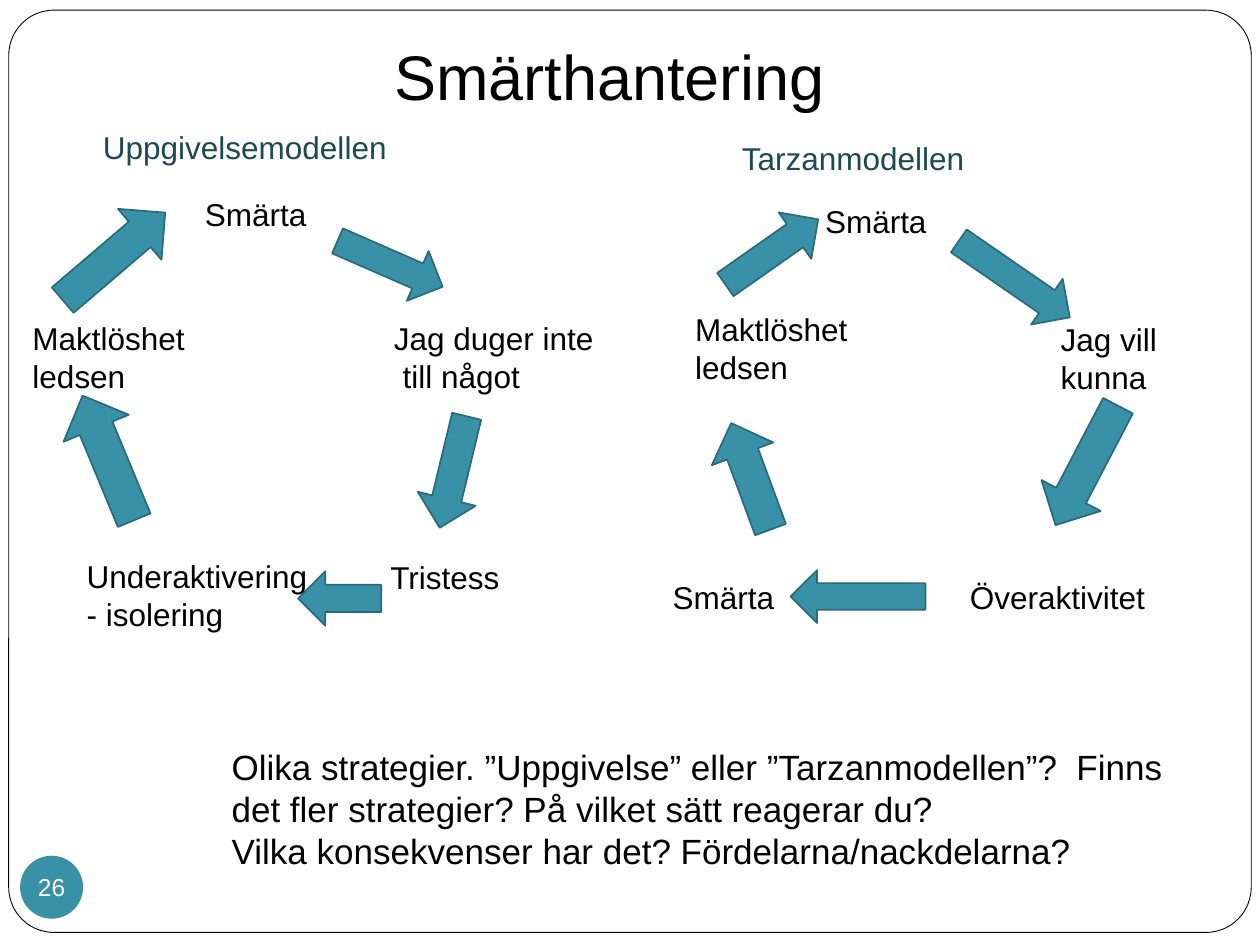
import pptx
import pptx.util
import pptx.dml.color
import pptx.enum.shapes
import pptx.enum.text

Pt = pptx.util.Pt
RGB = pptx.dml.color.RGBColor
SHAPE = pptx.enum.shapes.MSO_SHAPE
ALIGN = pptx.enum.text.PP_ALIGN
ANCHOR = pptx.enum.text.MSO_ANCHOR
AUTO = pptx.enum.text.MSO_AUTO_SIZE

BLACK = RGB(0x00, 0x00, 0x00)
WHITE = RGB(0xFF, 0xFF, 0xFF)
TEAL = RGB(0x38, 0x91, 0xA7)
TEAL_EDGE = RGB(0x29, 0x6B, 0x7C)
TEAL_DARK = RGB(0x1C, 0x49, 0x54)

UP, DOWN = SHAPE.UP_ARROW, SHAPE.DOWN_ARROW

HEADINGS = [
    ("Uppgivelsemodellen", (51.8, 69.8, 189.4, 29)),
    ("Tarzanmodellen", (416.9, 75.6, 189.4, 29)),
]
GIVING_UP_STEPS = [
    ("Smärta", (110, 108, 73.5, 29)),
    ("Jag duger inte\v till något", (218, 179, 130, 51)),
    ("Tristess", (216, 315.4, 87, 29)),
    ("Underaktivering\v- isolering", (42.5, 314.6, 141, 51)),
    ("Maktlöshet\nledsen", (11.5, 179, 122, 51)),
]
GIVING_UP_ARROWS = [
    (DOWN, (207.4, 118, 31, 65.5), 293.6),
    (DOWN, (242, 237, 34, 65.5), 13.6),
    (UP, (41.8, 223.2, 40.3, 77), 337.5),
    (UP, (178.6, 318.2, 31, 47.5), 270),
    (UP, (46, 108, 38.2, 77), 49.5),
]
TARZAN_STEPS = [
    ("Smärta", (464.4, 111.6, 83, 29)),
    ("Jag vill kunna", (599, 179.3, 79, 51)),
    ("Överaktivitet", (547.2, 327, 119, 29)),
    ("Smärta", (377.3, 327, 104.4, 29)),
    ("Maktlöshet\nledsen", (390.2, 173.5, 139.7, 51)),
]
TARZAN_ARROWS = [
    (UP, (410.4, 239.8, 37.4, 64.8), 339.7),
    (DOWN, (563.8, 121, 31.7, 77), 304.6),
    (UP, (424.8, 111.6, 32.4, 64.8), 54.9),
    (DOWN, (601.9, 227.5, 38.2, 77), 27.6),
    (DOWN, (475.2, 302.4, 30.2, 77), 90),
]
QUESTION = (
    "Olika strategier. ”Uppgivelse” eller ”Tarzanmodellen”?  Finns det fler "
    "strategier? På vilket sätt reagerar du?\n"
    "Vilka konsekvenser har det? Fördelarna/nackdelarna?"
)


def set_all(target, values):
    for name, value in values.items():
        setattr(target, name, value)


def points(box):
    return [Pt(v) for v in box]


def write(sp, text, size, color, align=ALIGN.LEFT, **frame):
    tf = sp.text_frame
    tf.text = text
    set_all(tf, {"word_wrap": True, "auto_size": AUTO.NONE,
                 "vertical_anchor": ANCHOR.TOP, **frame})
    for p in tf.paragraphs:
        p.alignment = align
        for r in p.runs:
            set_all(r.font, {"name": "Arial", "size": Pt(size)})
            r.font.color.rgb = color


def add_text(s, text, box, size=18, color=BLACK):
    write(s.shapes.add_textbox(*points(box)), text, size, color)


def add_shape(s, kind, box, fill, line=None, width=1, rotation=0):
    sp = s.shapes.add_shape(kind, *points(box))
    sp.shadow.inherit = False
    sp.rotation = rotation
    sp.fill.solid()
    sp.fill.fore_color.rgb = fill
    if line is None:
        sp.line.fill.background()
    else:
        sp.line.color.rgb = line
        sp.line.width = Pt(width)
    return sp


def add_title(s, text, box):
    sp = s.shapes.title
    set_all(sp, dict(zip(("left", "top", "width", "height"), points(box))))
    write(sp, text, 36, BLACK)


def add_frame(s):
    sp = add_shape(s, SHAPE.ROUNDED_RECTANGLE, (5, 5.8, 710, 527), WHITE, BLACK, 0.5)
    sp.adjustments[0] = 0.049
    s.shapes.title.element.addprevious(sp.element)


def add_page_badge(s, number):
    sp = add_shape(s, SHAPE.OVAL, (11.5, 489, 36, 36), TEAL)
    write(sp, number, 14, WHITE, ALIGN.CENTER, word_wrap=False,
          vertical_anchor=ANCHOR.MIDDLE, margin_left=0, margin_right=0,
          margin_top=0, margin_bottom=0)


def add_cycle(s, steps, arrows):
    for text, box in steps:
        add_text(s, text, box)
    for kind, box, rotation in arrows:
        add_shape(s, kind, box, TEAL, TEAL_EDGE, rotation=rotation)


def main():
    prs = pptx.Presentation()
    set_all(prs, {"slide_width": Pt(720), "slide_height": Pt(540)})
    s = prs.slides.add_slide(prs.slide_layouts[5])
    add_title(s, "Smärthantering", (218, 18, 327, 51))
    add_frame(s)
    add_page_badge(s, "26")
    add_text(s, QUESTION, (125.3, 422.6, 558.7, 80), 20)
    add_cycle(s, GIVING_UP_STEPS, GIVING_UP_ARROWS)
    add_cycle(s, TARZAN_STEPS, TARZAN_ARROWS)
    for text, box in HEADINGS:
        add_text(s, text, box, color=TEAL_DARK)
    prs.save("out.pptx")


if __name__ == "__main__":
    main()
